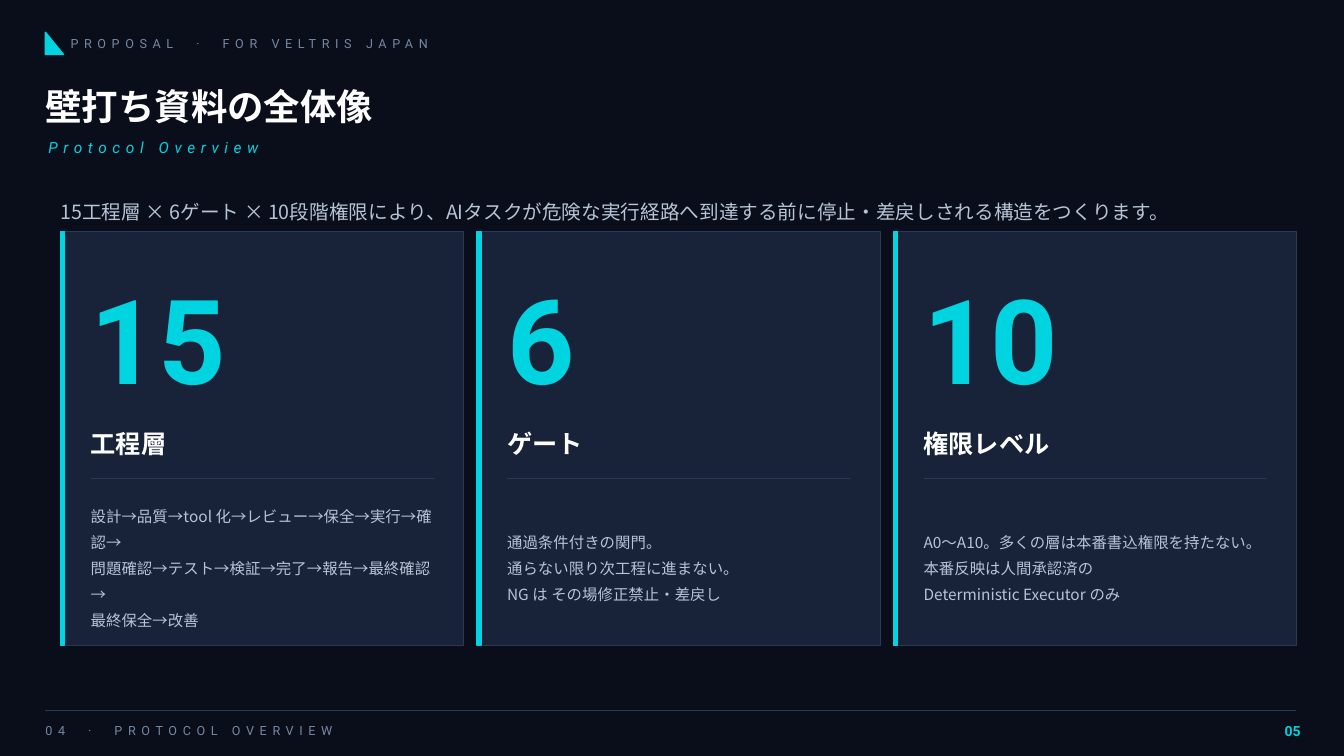
"""Build the protocol overview slide with three figure cards."""
from pptx import Presentation
from pptx import util as u
from pptx.dml.color import RGBColor
from pptx.enum import shapes, text
from pptx.oxml.ns import qn
from lxml import etree

COLORS = {
    "bg": "0A0E1A", "card": "182238", "border": "2A3A55", "accent": "00D4E0",
    "white": "FFFFFF", "body": "B7C3D6", "muted": "7787A0",
}
C = {name: RGBColor.from_string(value) for name, value in COLORS.items()}
JP, LATIN = "Noto Sans CJK JP", "Roboto"

CARDS = [
    ("15", "工程層", [
        "設計→品質→tool 化→レビュー→保全→実行→確認→",
        "問題確認→テスト→検証→完了→報告→最終確認→",
        "最終保全→改善"]),
    ("6", "ゲート", [
        "通過条件付きの関門。",
        "通らない限り次工程に進まない。",
        "NG は その場修正禁止・差戻し"]),
    ("10", "権限レベル", [
        "A0〜A10。多くの層は本番書込権限を持たない。",
        "本番反映は人間承認済の",
        "Deterministic Executor のみ"]),
]

prs = Presentation()
prs.slide_width, prs.slide_height = u.Inches(13.33), u.Inches(7.5)
s = prs.slides.add_slide(prs.slide_layouts[6])
s.background.fill.solid()
s.background.fill.fore_color.rgb = C["bg"]


def add_text(box, lines, size, color, font=JP, bold=None, italic=None,
             spacing=0, leading=None, align=None):
    tf = s.shapes.add_textbox(*map(u.Inches, box)).text_frame
    tf.word_wrap = True
    tf.vertical_anchor = text.MSO_ANCHOR.MIDDLE
    tf.margin_left = tf.margin_top = tf.margin_right = tf.margin_bottom = 0
    tf.text = "\n".join(lines)
    for p in tf.paragraphs:
        if leading:
            p.line_spacing = leading
        if align:
            p.alignment = align
        f = p.font
        f.size, f.bold, f.italic, f.name = u.Pt(size), bold, italic, font
        f.color.rgb = C[color]
        props = p._p.pPr.find(qn("a:defRPr"))
        etree.SubElement(props, qn("a:ea")).set("typeface", font)
        if spacing:
            props.set("spc", str(spacing * 100))


def add_block(kind, box, fill, line, width):
    sp = s.shapes.add_shape(kind, *map(u.Inches, box))
    sp.shadow.inherit = False
    sp.fill.solid()
    sp.fill.fore_color.rgb = C[fill]
    sp.line.color.rgb = C[line]
    sp.line.width = u.Pt(width)


add_block(shapes.MSO_SHAPE.RIGHT_TRIANGLE, (0.45, 0.32, 0.18, 0.22), "accent", "accent", 1)
add_text((0.7, 0.27, 6, 0.32), ["PROPOSAL  ·  FOR VELTRIS JAPAN"], 9, "muted", LATIN, spacing=4)
add_text((0.45, 0.75, 12, 0.6), ["壁打ち資料の全体像"], 26, "white", bold=True)
add_text((0.48, 1.3, 12, 0.32), ["Protocol Overview"], 11, "accent", LATIN, italic=True, spacing=4)
add_text((0.6, 1.85, 12.2, 0.5), [
    "15工程層 × 6ゲート × 10段階権限により、"
    "AIタスクが危険な実行経路へ到達する前に停止・差戻しされる構造をつくります。"], 14, "body")

rules = [(0.45, 12.85, 7.05)]
for i, (number, title, details) in enumerate(CARDS):
    left = 0.6 + 4.13 * i
    inner = left + 0.3
    add_block(shapes.MSO_SHAPE.RECTANGLE, (left, 2.3, 4, 4.1), "card", "border", 0.75)
    add_block(shapes.MSO_SHAPE.RECTANGLE, (left, 2.3, 0.04, 4.1), "accent", "accent", 1)
    add_text((inner, 2.6, 3.5, 1.5), [number], 84, "accent", LATIN, bold=True)
    add_text((inner, 4.15, 3.5, 0.5), [title], 18, "white", bold=True)
    add_text((inner, 4.9, 3.5, 1.4), details, 11, "body", leading=1.4)
    rules.append((inner, inner + 3.4, 4.75))

for start, end, y in rules:
    rule = s.shapes.add_connector(
        shapes.MSO_CONNECTOR.STRAIGHT, *map(u.Inches, (start, y, end, y)))
    rule.line.color.rgb = C["border"]
    rule.line.width = u.Pt(0.6)
    etree.SubElement(rule._element.spPr, qn("a:effectLst"))

add_text((0.45, 7.1, 9, 0.3), ["04  ·  PROTOCOL OVERVIEW"], 9, "muted", LATIN, spacing=4)
add_text((12.45, 7.1, 0.45, 0.3), ["05"], 10, "accent", LATIN, bold=True,
         align=text.PP_ALIGN.RIGHT)

prs.save("out.pptx")
